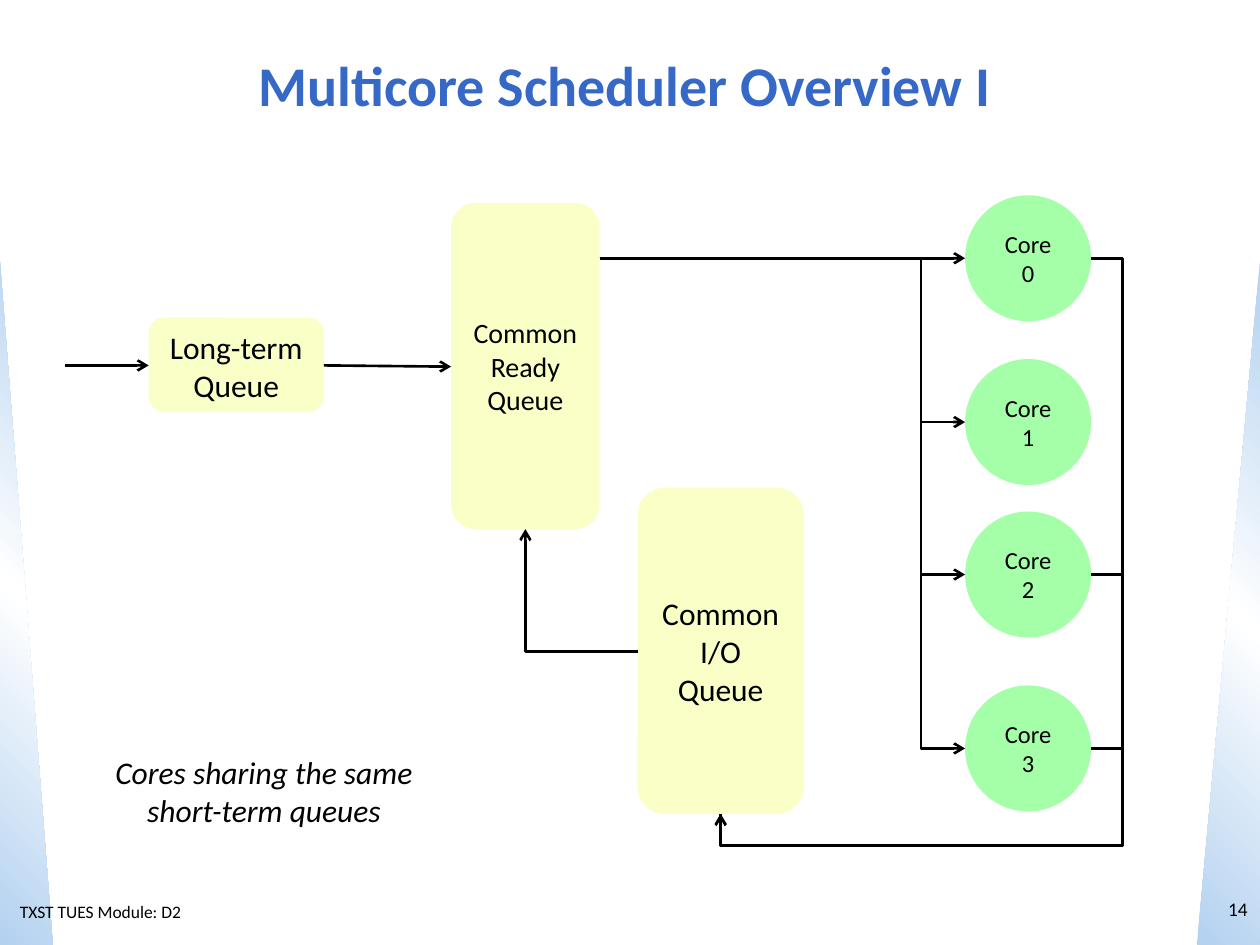
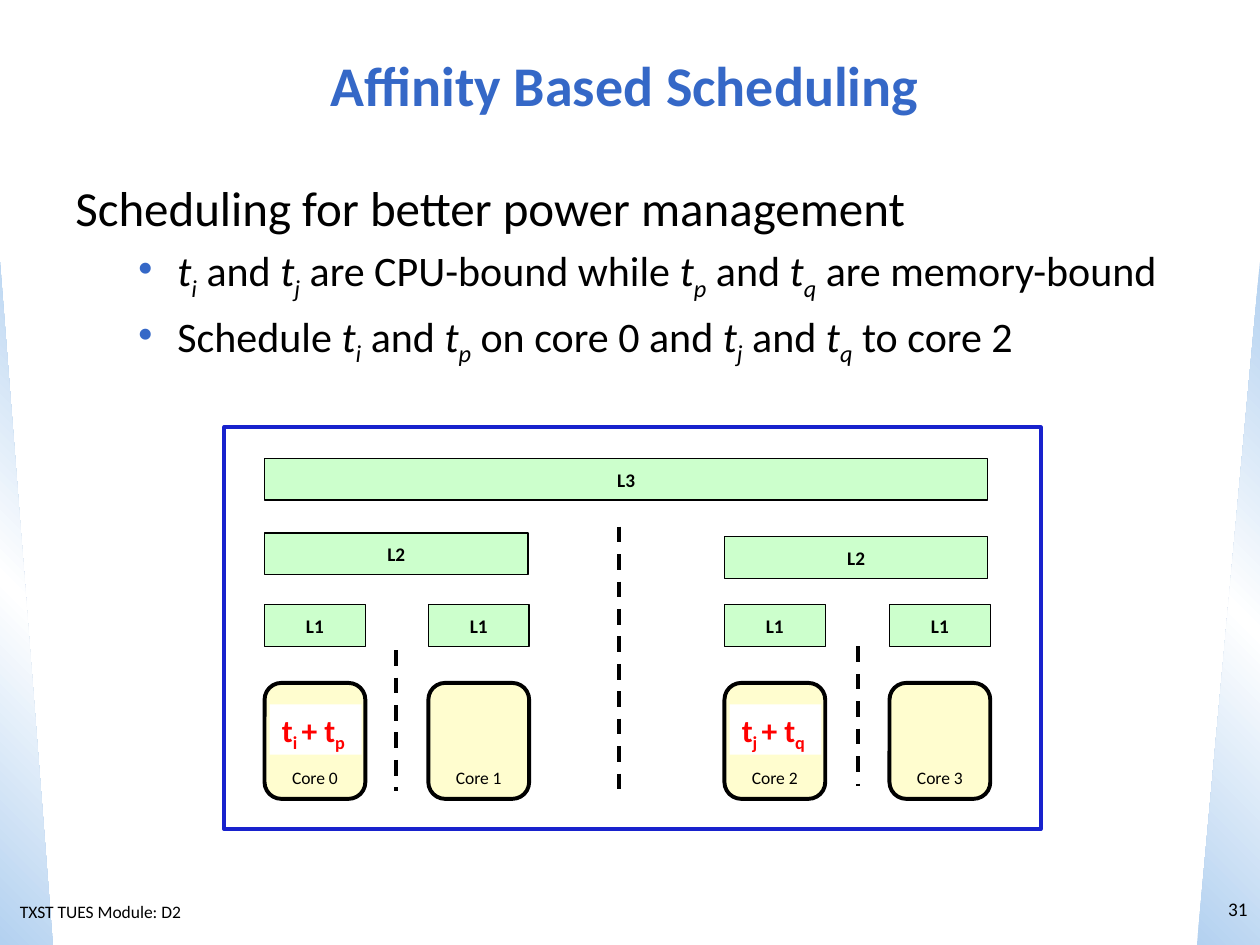
from lxml import etree
from pptx import Presentation, util as u
from pptx.dml.color import RGBColor
from pptx.enum import dml, shapes, text
from pptx.oxml.ns import qn

BLACK = RGBColor(0x00, 0x00, 0x00)
WHITE = RGBColor(0xFF, 0xFF, 0xFF)
RED = RGBColor(0xFF, 0x00, 0x00)
BLUE = RGBColor(0x35, 0x68, 0xC7)
FRAME = RGBColor(0x18, 0x22, 0xCD)
SKY = RGBColor(0xB3, 0xD1, 0xF0)
LEMON = RGBColor(0xFA, 0xFF, 0xC8)
CREAM = RGBColor(0xFF, 0xFD, 0xCF)
GREEN = RGBColor(0xA5, 0xFF, 0xA9)
MINT = RGBColor(0xCC, 0xFF, 0xCC)

KIND = shapes.MSO_SHAPE
ROUND, RECT, OVAL = KIND.ROUNDED_RECTANGLE, KIND.RECTANGLE, KIND.OVAL
LEFT, MID, RIGHT = text.PP_ALIGN.LEFT, text.PP_ALIGN.CENTER, text.PP_ALIGN.RIGHT
TOP, CENTRE, BASE = text.MSO_ANCHOR.TOP, text.MSO_ANCHOR.MIDDLE, text.MSO_ANCHOR.BOTTOM


def make(host, kind, at, words="", fill=None, edge=None, width=0.75, color=BLACK,
         anchor=CENTRE, align=MID, wrap=True, math=False, **font):
    """Add a shape (or a text box if kind is None). "|" splits runs, "_" marks a subscript."""
    spot = [u.Inches(n) for n in at]
    if kind is None:
        item = host.add_textbox(*spot)
    else:
        item = host.add_shape(kind, *spot)
        item.shadow.inherit = False
        for part, tint in ((item.fill, fill), (item.line.fill, edge)):
            if tint is None:
                part.background()
            else:
                part.solid()
                part.fore_color.rgb = tint
        if edge is not None:
            item.line.width = u.Pt(width)
    frame = item.text_frame
    frame.word_wrap, frame.vertical_anchor = wrap, anchor
    for i, row in enumerate(words.split("\n") if words else []):
        para = frame.add_paragraph() if i else frame.paragraphs[0]
        para.alignment = align
        for bit in row.split("|"):
            run = para.add_run()
            run.text = bit.lstrip("_")
            style = {"name": "Calibri", **font}
            if math:
                style["italic"] = bit == "t" or bit.startswith("_")
            for key, val in style.items():
                setattr(run.font, key, val)
            run.font.color.rgb = color
            if bit.startswith("_"):
                run.font._element.set("baseline", "-25000")
    return item


def link(host, start, end, bend=None, adjust=(), arrow=True, width=1.5, dash=None):
    """Add a straight line, or an elbow line with the given preset and adjustments."""
    kind = shapes.MSO_CONNECTOR.ELBOW if bend else shapes.MSO_CONNECTOR.STRAIGHT
    wire = host.add_connector(kind, *[u.Inches(n) for n in (*start, *end)])
    wire.line.color.rgb, wire.line.width = BLACK, u.Pt(width)
    if dash:
        wire.line.dash_style = dash
    props = wire._element.spPr
    if bend:
        geom = props.find(qn("a:prstGeom"))
        geom.set("prst", bend)
        for n, val in enumerate(adjust, 1):
            etree.SubElement(geom.find(qn("a:avLst")), qn("a:gd"),
                             name=f"adj{n}", fmla=f"val {round(val * 100000)}")
    if arrow:
        etree.SubElement(props.find(qn("a:ln")), qn("a:tailEnd"), type="arrow")
    etree.SubElement(props, qn("a:effectLst"))


deck = Presentation()
deck.slide_width, deck.slide_height = u.Inches(10), u.Inches(7.5)

# Shared bands, footer, title and page number
pages = []
for title, number in (("Multicore Scheduler Overview I", "14"),
                      ("Affinity Based Scheduling", "31")):
    page = deck.slides.add_slide(deck.slide_layouts[6]).shapes
    pages.append(page)
    for left, wide, angle in ((0, 0.42, 315), (9.5, 0.5, 45)):
        band = make(page, KIND.RIGHT_TRIANGLE, (left, 2.08, wide, 5.42), fill=SKY)
        props = band._element.spPr
        grad = etree.Element(qn("a:gradFill"), rotWithShape="1")
        stops = etree.SubElement(grad, qn("a:gsLst"))
        for pos, tint in ((0, SKY), (50, WHITE), (100, SKY)):
            stop = etree.SubElement(stops, qn("a:gs"), pos=str(pos * 1000))
            etree.SubElement(stop, qn("a:srgbClr"), val=str(tint))
        etree.SubElement(grad, qn("a:lin"), ang=str(angle * 60000), scaled="0")
        props.replace(props.find(qn("a:solidFill")), grad)
        if left:
            props.find(qn("a:xfrm")).set("flipH", "1")
    make(page, None, (0.06, 7.1, 1.75, 0.27), "TXST TUES Module: D2",
         anchor=TOP, align=LEFT, size=u.Pt(10))
    make(page, None, (0.25, 0.25, 9.42, 0.83), title, color=BLUE,
         size=u.Pt(32), bold=True)
    make(page, None, (9.5, 6.92, 0.5, 0.58), number, align=RIGHT, size=u.Pt(11))

flow, cache = pages

# Scheduler: queues
for at, words, size, anchor in (
        ((3.58, 1.61, 1.18, 2.59), "Common\nReady Queue", 16, CENTRE),
        ((5.06, 3.87, 1.32, 2.59), "Common\nI/O\nQueue", 18, CENTRE),
        ((1.18, 2.52, 1.39, 0.75), "Long-term Queue", 18, TOP)):
    make(flow, ROUND, at, words, LEMON, anchor=anchor, size=u.Pt(size))
make(flow, None, (0.79, 5.93, 2.61, 0.71), "Cores sharing the same short-term queues",
     anchor=TOP, size=u.Pt(18), italic=True)

# Scheduler: arrows between queues
link(flow, (0.52, 2.9), (1.18, 2.9))
link(flow, (2.57, 2.9), (3.58, 2.91))
link(flow, (5.06, 5.17), (4.17, 4.2), "bentConnector2")

# Scheduler: cores, each fed by the ready queue; all but core 1 return to I/O
ready, entry, trunk = (4.76, 2.05), 7.66, 7.31
leave, inlet, side, floor = 8.66, (5.72, 6.46), 8.91, 6.71
for n, top in enumerate((1.55, 2.85, 4.06, 5.44)):
    mid = top + 0.5
    make(flow, OVAL, (entry, top, 1, 1), f"Core {n}", GREEN, size=u.Pt(14))
    if n == 0:
        link(flow, ready, (entry, mid))
    else:
        turn = (trunk - ready[0]) / (entry - ready[0])
        link(flow, ready, (entry, mid), "bentConnector3", [turn])
    if n != 1:
        out = (leave - side) / (leave - inlet[0])
        down = (floor - mid) / (inlet[1] - mid)
        link(flow, (leave, mid), inlet, "bentConnector4", [out, down], arrow=n > 0)

# Affinity: body text
body = make(cache, None, (0.5, 1.36, 9, 1.8),
            "Scheduling for better power management\n"
            "t|_i| and |t|_j| are CPU-bound while |t|_p| and |t|_q| are memory-bound\n"
            "Schedule |t|_i| and |t|_p| on core 0 and |t|_j| and |t|_q| to core 2",
            anchor=TOP, align=LEFT, math=True, size=u.Pt(24))
lead, *points = body.text_frame.paragraphs
lead.runs[0].font.size = u.Pt(28)
for para in points:
    props = para._p.get_or_add_pPr()
    props.set("marL", str(u.Inches(0.81)))
    props.set("indent", str(u.Inches(-0.31)))
    tint = etree.SubElement(props, qn("a:buClr"))
    etree.SubElement(tint, qn("a:srgbClr"), val=str(BLUE))
    etree.SubElement(props, qn("a:buChar"), char="•")
    para.level = 1
    para.space_before = u.Pt(4.8)

# Affinity: cores and cache levels
chip = cache.add_group_shape().shapes
for n, left in enumerate((2.1, 3.4, 5.75, 7.06)):
    make(chip, ROUND, (left, 5.42, 0.8, 0.92), f"Core {n}", CREAM, BLACK, 2.25,
         anchor=BASE, size=u.Pt(10))
    make(chip, RECT, (left, 4.8, 0.8, 0.33), "L1", MINT, BLACK, wrap=False,
         size=u.Pt(11), bold=True)
for name, left, top, wide in (("L2", 2.1, 4.23, 2.09), ("L2", 5.75, 4.26, 2.09),
                              ("L3", 2.1, 3.64, 5.74)):
    make(chip, RECT, (left, top, wide, 0.33), name, MINT, BLACK, wrap=False,
         size=u.Pt(11), bold=True)

# Affinity: dividers and frame
for x, top, end in ((4.91, 4.18, 6.34), (6.81, 5.13, 6.24), (3.14, 5.16, 6.28)):
    link(chip, (x, top), (x, end), arrow=False, width=2.25,
         dash=dml.MSO_LINE.DASH)
make(chip, RECT, (1.78, 3.39, 6.48, 3.19), edge=FRAME, width=2.25)

# Affinity: task pairs
for left, pair in ((2.14, "t|_i |+ t|_p "), (5.79, "t|_j |+ t|_q ")):
    make(cache, RECT, (left, 5.59, 0.73, 0.4), pair, WHITE, color=RED, anchor=TOP,
         wrap=False, size=u.Pt(18), bold=True)

deck.save("out.pptx")
